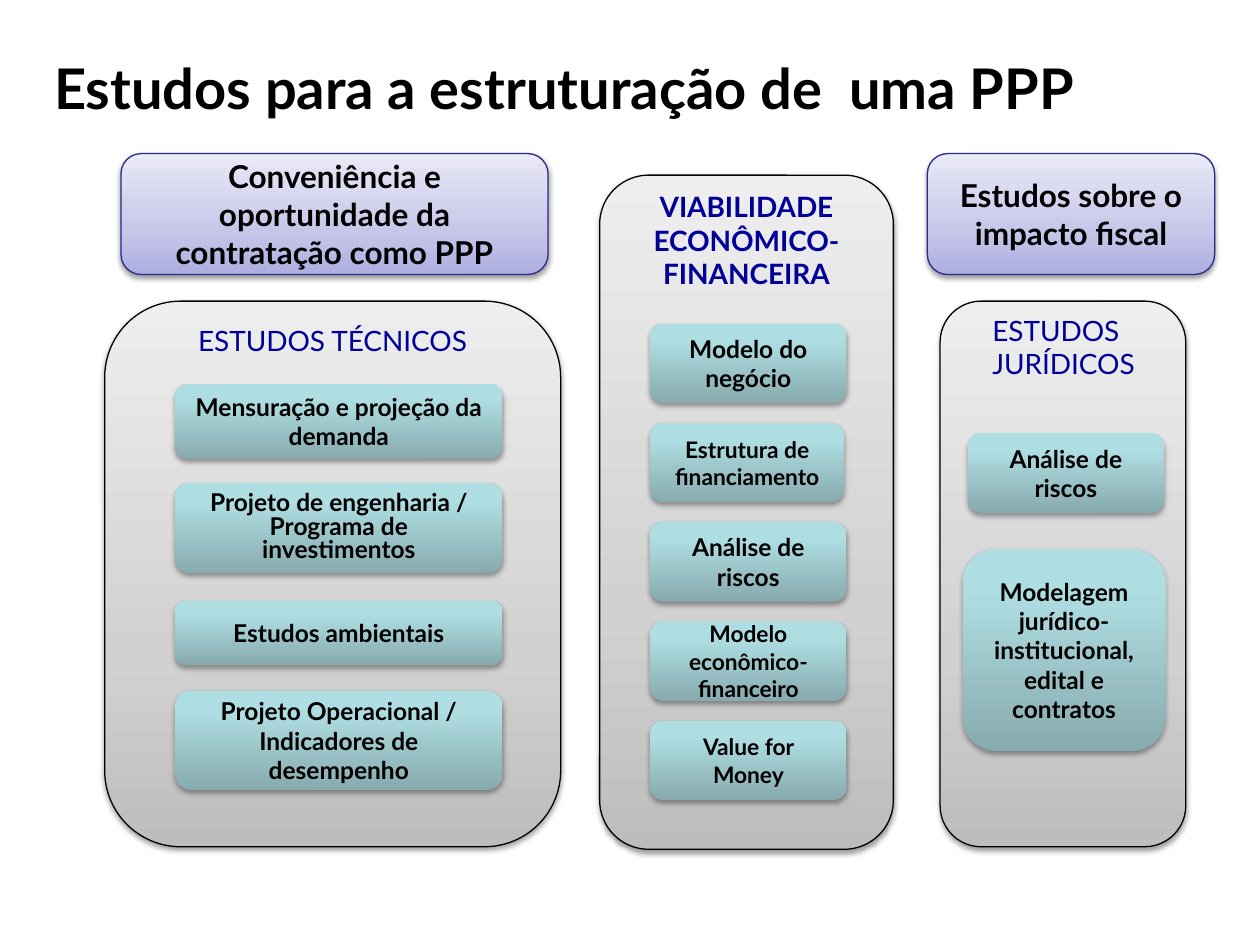
from lxml.etree import SubElement as Sub
from copy import deepcopy
from pptx import Presentation
from pptx.dml.color import RGBColor as RGB
from pptx.enum.shapes import MSO_SHAPE as Shape
from pptx.enum.text import MSO_ANCHOR as Anchor, PP_ALIGN as Align
from pptx.oxml.ns import qn
from pptx.util import Pt

COLORS = {"text": "000000", "heading": "000099", "panel_line": "000000", "header_line": "2A2A89"}
GRADIENTS = {
    "panel": [(0, "BDBDBD"), (0.35, "D1D1D1"), (1, "EEEEEE")],
    "header": [(0, "ADADE1"), (0.35, "C6C6E9"), (1, "E9E9F7")],
    "item": [(0, "87ABAE"), (0.8, "AFDEE2"), (1, "AFE0E4")],
}
STYLES = {
    "panel": {"line": "panel_line", "alpha": 38, "dist": 1.6, "anchor": Anchor.TOP},
    "header": {"line": "header_line", "alpha": 38, "dist": 1.6, "anchor": Anchor.MIDDLE},
    "item": {"line": None, "alpha": 35, "dist": 1.8, "anchor": Anchor.MIDDLE},
}
TITLE = ("Estudos para a estruturação de  uma PPP", (23.8, 16.6, 660, 66))
PANELS = [
    ("ESTUDOS JURÍDICOS", (537.2, 172.1, 140.4, 311.8), Align.LEFT, False, 23),
    ("ESTUDOS TÉCNICOS", (59.8, 172.1, 260.6, 311.8), Align.CENTER, False, 0),
    ("VIABILIDADE ECONÔMICO-FINANCEIRA", (342.7, 100.1, 167.8, 385.2), Align.CENTER, True, 0),
]
HEADERS = [
    ("Conveniência e oportunidade da contratação como PPP", 69.1, 244.1),
    ("Estudos sobre o impacto fiscal", 529.9, 164.2),
]
TECHNICAL = [
    ("Mensuração e projeção da demanda", 219.6, 42.5, 1),
    ("Projeto de engenharia / Programa de investimentos", 275.8, 51.8, 0.8),
    ("Estudos ambientais", 343.4, 36.7, 1),
    ("Projeto Operacional / Indicadores de desempenho", 394.6, 56.9, 1),
]
FINANCIAL = [
    ("Modelo do negócio", 14, 112.3),
    ("Estrutura de financiamento", 13, 110.9),
    ("Análise de riscos", 14, 112.3),
    ("Modelo econômico- financeiro", 13, 112.3),
    ("Value for Money", 13, 112.3),
]
LEGAL = [
    ("Análise de riscos", (553, 247.7, 112.3, 45.4)),
    ("Modelagem jurídico-institucional, edital e contratos", (550.1, 313.9, 115.9, 115.2)),
]
FINANCIAL_TOP, FINANCIAL_PITCH, ITEM_HEIGHT = 185, 56.7, 45.4


def write(tf, text, size, color="text", bold=True, align=Align.CENTER, spacing=None):
    p = tf.paragraphs[0]
    r = p.add_run()
    r.text = text
    for key, value in {"alignment": align, "line_spacing": spacing}.items():
        setattr(p, key, value)
    for key, value in {"name": "Lato", "size": Pt(size), "bold": bold}.items():
        setattr(r.font, key, value)
    r.font.color.rgb = RGB.from_string(COLORS[color])


def paint(s, stops):
    s.fill.gradient()
    s.fill.gradient_angle = 90
    gs = s._element.spPr.find(".//" + qn("a:gsLst"))
    gs.append(deepcopy(gs[-1]))
    for stop, (position, color) in zip(s.fill.gradient_stops, stops):
        stop.position = position
        stop.color.rgb = RGB.from_string(color)


def shade(s, alpha, dist):
    s.shadow.inherit = False
    effects = s._element.spPr.find(qn("a:effectLst"))
    shadow = Sub(effects, qn("a:outerShdw"), blurRad=str(Pt(3.1)), dist=str(Pt(dist)),
                 dir="5400000", rotWithShape="0")
    color = Sub(shadow, qn("a:srgbClr"), val="000000")
    Sub(color, qn("a:alpha"), val=str(alpha * 1000))


def add_box(slide, kind, box):
    style = STYLES[kind]
    s = slide.shapes.add_shape(Shape.ROUNDED_RECTANGLE, *map(Pt, box))
    s.adjustments[0] = 0.167
    paint(s, GRADIENTS[kind])
    if style["line"]:
        s.line.color.rgb = RGB.from_string(COLORS[style["line"]])
        s.line.width = Pt(0.75)
    else:
        s.line.fill.background()
    shade(s, style["alpha"], style["dist"])
    tf = s.text_frame
    tf.word_wrap = True
    tf.vertical_anchor = style["anchor"]
    return tf


def main():
    prs = Presentation()
    prs.slide_width, prs.slide_height = Pt(720), Pt(540)
    slide = prs.slides.add_slide(prs.slide_layouts[6])

    text, box = TITLE
    tf = slide.shapes.add_textbox(*map(Pt, box)).text_frame
    tf.word_wrap = True
    tf.vertical_anchor = Anchor.MIDDLE
    write(tf, text, 32, align=Align.LEFT)

    for text, box, align, bold, left in PANELS:
        tf = add_box(slide, "panel", box)
        for side, inset in {"left": left, "top": 0, "right": 0, "bottom": 0}.items():
            setattr(tf, f"margin_{side}", Pt(inset))
        write(tf, text, 16, "heading", bold, align)

    for text, left, width in HEADERS:
        write(add_box(slide, "header", (left, 87.8, width, 69.1)), text, 18)

    for text, top, height, spacing in TECHNICAL:
        tf = add_box(slide, "item", (100.1, top, 187.2, height))
        write(tf, text, 14, spacing=spacing)

    for i, (text, size, width) in enumerate(FINANCIAL):
        top = FINANCIAL_TOP + i * FINANCIAL_PITCH
        write(add_box(slide, "item", (371.5, top, width, ITEM_HEIGHT)), text, size)

    for text, box in LEGAL:
        write(add_box(slide, "item", box), text, 14)

    prs.save("out.pptx")


if __name__ == "__main__":
    main()
